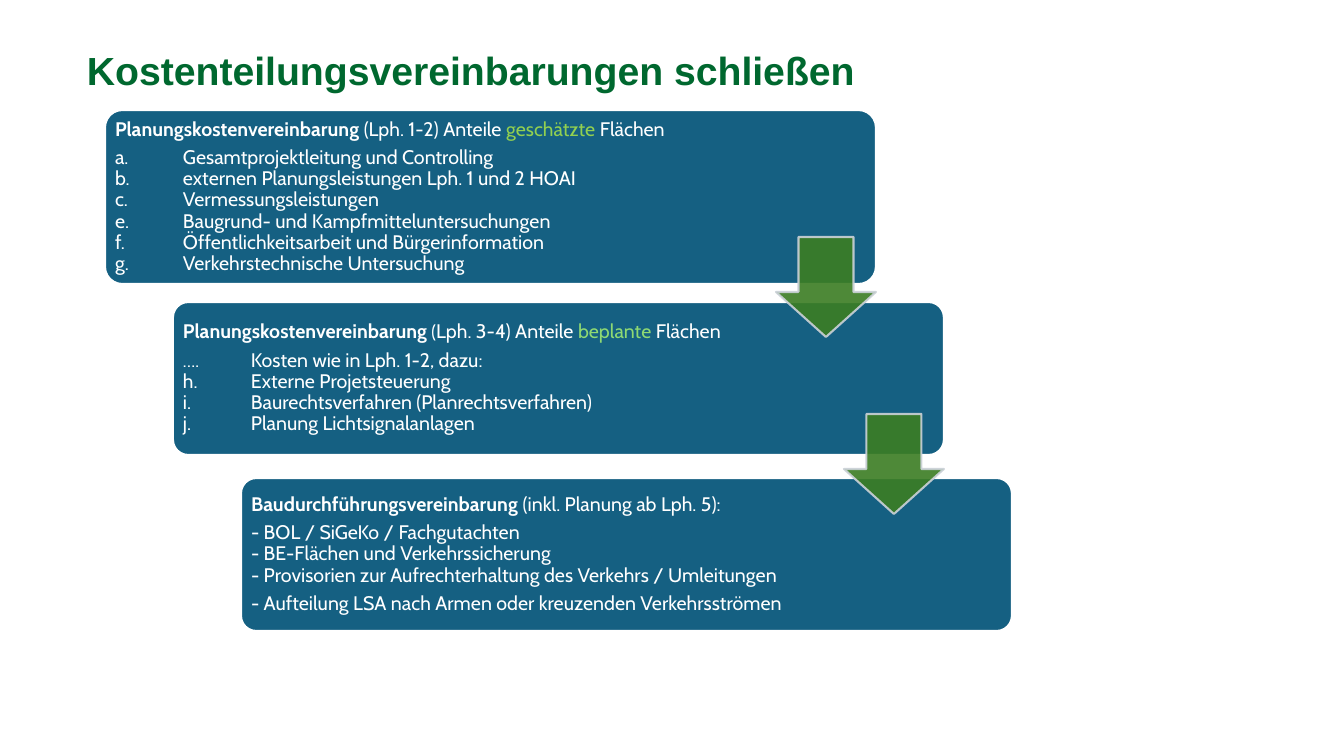
from lxml import etree
from pptx import Presentation
from pptx.dml.color import RGBColor
from pptx.enum.shapes import MSO_SHAPE
from pptx.enum.text import MSO_ANCHOR
from pptx.oxml.ns import qn
from pptx.util import Pt

ROUND_RECT = MSO_SHAPE.ROUNDED_RECTANGLE
DOWN_ARROW = MSO_SHAPE.DOWN_ARROW
MIDDLE, BOTTOM = MSO_ANCHOR.MIDDLE, MSO_ANCHOR.BOTTOM

WHITE = RGBColor(0xFF, 0xFF, 0xFF)
BLUE = RGBColor(0x15, 0x60, 0x82)
LIME = RGBColor(0x92, 0xD0, 0x50)
LIGHT_GREEN = RGBColor(0x8E, 0xD9, 0x73)
ARROW_GREEN = RGBColor(0x3B, 0x7D, 0x23)
ARROW_EDGE = RGBColor(0xCC, 0xD2, 0xD8)
TITLE_GREEN = RGBColor(0x00, 0x68, 0x2F)

TITLE = "Kostenteilungsvereinbarungen schließen"
BOLD = {"bold": True}
SMALL = {"size": 13}

STEPS = [
    {"top": 110, "height": 174, "text_width": 605, "gaps_after": [0], "lines": [
        [("Planungskostenvereinbarung ", BOLD), ("(Lph. 1-2) Anteile ", {}),
         ("geschätzte", {"color": LIME}), (" Flächen", {})],
        [("a.\tGesamtprojektleitung und Controlling", {})],
        [("b.\texternen Planungsleistungen Lph. 1 und 2 HOAI", {})],
        [("c.\tVermessungsleistungen", {})],
        [("e.\tBaugrund- und Kampfmitteluntersuchungen", {})],
        [("f.\tÖffentlichkeitsarbeit und Bürgerinformation", {})],
        [("g.\tVerkehrstechnische Untersuchung", {})],
    ]},
    {"top": 302, "height": 153, "text_width": 595, "gaps_after": [0], "lines": [
        [("Planungskostenvereinbarung", BOLD), (" (", SMALL), ("Lph. 3-4) Anteile ", {}),
         ("beplante", {"color": LIGHT_GREEN}), (" Flächen", {})],
        [("….\t", SMALL), ("Kosten wie in Lph. 1-2, dazu:", {})],
        [("h. \tExterne Projetsteuerung", {})],
        [("i. \tBaurechtsverfahren (Planrechtsverfahren)", {})],
        [("j. \tPlanung Lichtsignalanlagen", {})],
    ]},
    {"top": 478, "height": 153, "text_width": 595, "gaps_after": [0, 3], "lines": [
        [("Baudurchführungsvereinbarung", BOLD), (" (inkl. Planung ab Lph. 5):", {})],
        [("- BOL / SiGeKo / Fachgutachten", {})],
        [("- BE-Flächen und Verkehrssicherung", {})],
        [("- Provisorien zur Aufrechterhaltung des Verkehrs / Umleitungen", {})],
        [("- Aufteilung LSA nach Armen oder kreuzenden Verkehrsströmen", {})],
    ]},
]

STEP_LEFT, STEP_WIDTH, STEP_SHIFT = 105, 771, 68
TEXT_PAD, TEXT_INSET, TAB_STOP = 4, 6, 68
ARROW_LEFT, ARROW_TOPS, ARROW_SIZE = 776, (237, 414), 100
ARROW_OPACITY = 90


def px(n):
    return round(n * 914400 / 100.8)


def add_block(s, preset, box, adjustments, fill, edge):
    sp = s.shapes.add_shape(preset, *map(px, box))
    sp.shadow.inherit = False
    for i, value in enumerate(adjustments):
        sp.adjustments[i] = value
    sp.fill.solid()
    sp.fill.fore_color.rgb = fill
    sp.line.color.rgb = edge
    sp.line.width = Pt(1.5)
    return sp


def set_opacity(sp, percent):
    for color in sp._element.spPr.iter(qn("a:srgbClr")):
        etree.SubElement(color, qn("a:alpha"), val=str(percent * 1000))


def add_tab_stop(p, pos):
    tabs = etree.SubElement(p._p.get_or_add_pPr(), qn("a:tabLst"))
    etree.SubElement(tabs, qn("a:tab"), pos=str(px(pos)), algn="l")


def add_run(p, text, size=14, font="Cabin", color=WHITE, bold=False):
    r = p.add_run()
    r.text = text
    r.font.size = Pt(size)
    r.font.name = font
    r.font.color.rgb = color
    r.font.bold = bold


def add_text(s, lines, box, anchor=MIDDLE, inset=None, gaps_after=(), tab=None):
    tf = s.shapes.add_textbox(*map(px, box)).text_frame
    tf.word_wrap = True
    tf.vertical_anchor = anchor
    if inset is not None:
        tf.margin_left = tf.margin_right = tf.margin_top = tf.margin_bottom = px(inset)
    for i, runs in enumerate(lines):
        p = tf.paragraphs[0] if i == 0 else tf.add_paragraph()
        if tab and any("\t" in text for text, _ in runs):
            add_tab_stop(p, tab)
        p.line_spacing = 0.9
        p.space_after = Pt(5 if i in gaps_after else 0)
        for text, style in runs:
            add_run(p, text, **style)


prs = Presentation()
prs.slide_width, prs.slide_height = px(1344), px(756)
s = prs.slides.add_slide(prs.slide_layouts[6])

for i, step in enumerate(STEPS):
    left, top, height = STEP_LEFT + i * STEP_SHIFT, step["top"], step["height"]
    add_block(s, ROUND_RECT, (left, top, STEP_WIDTH, height), [0.1], BLUE, WHITE)
    text_box = (left + TEXT_PAD, top + TEXT_PAD, step["text_width"], height - 2 * TEXT_PAD)
    add_text(s, step["lines"], text_box, inset=TEXT_INSET,
             gaps_after=step["gaps_after"], tab=TAB_STOP)

for i, top in enumerate(ARROW_TOPS):
    box = (ARROW_LEFT + i * STEP_SHIFT, top, ARROW_SIZE, ARROW_SIZE)
    arrow = add_block(s, DOWN_ARROW, box, [0.55, 0.45], ARROW_GREEN, ARROW_EDGE)
    set_opacity(arrow, ARROW_OPACITY)

title_style = {"size": 28, "font": "Arial", "color": TITLE_GREEN, "bold": True}
add_text(s, [[(TITLE, title_style)]], (77, 48, 825, 51), anchor=BOTTOM)

prs.save("out.pptx")
